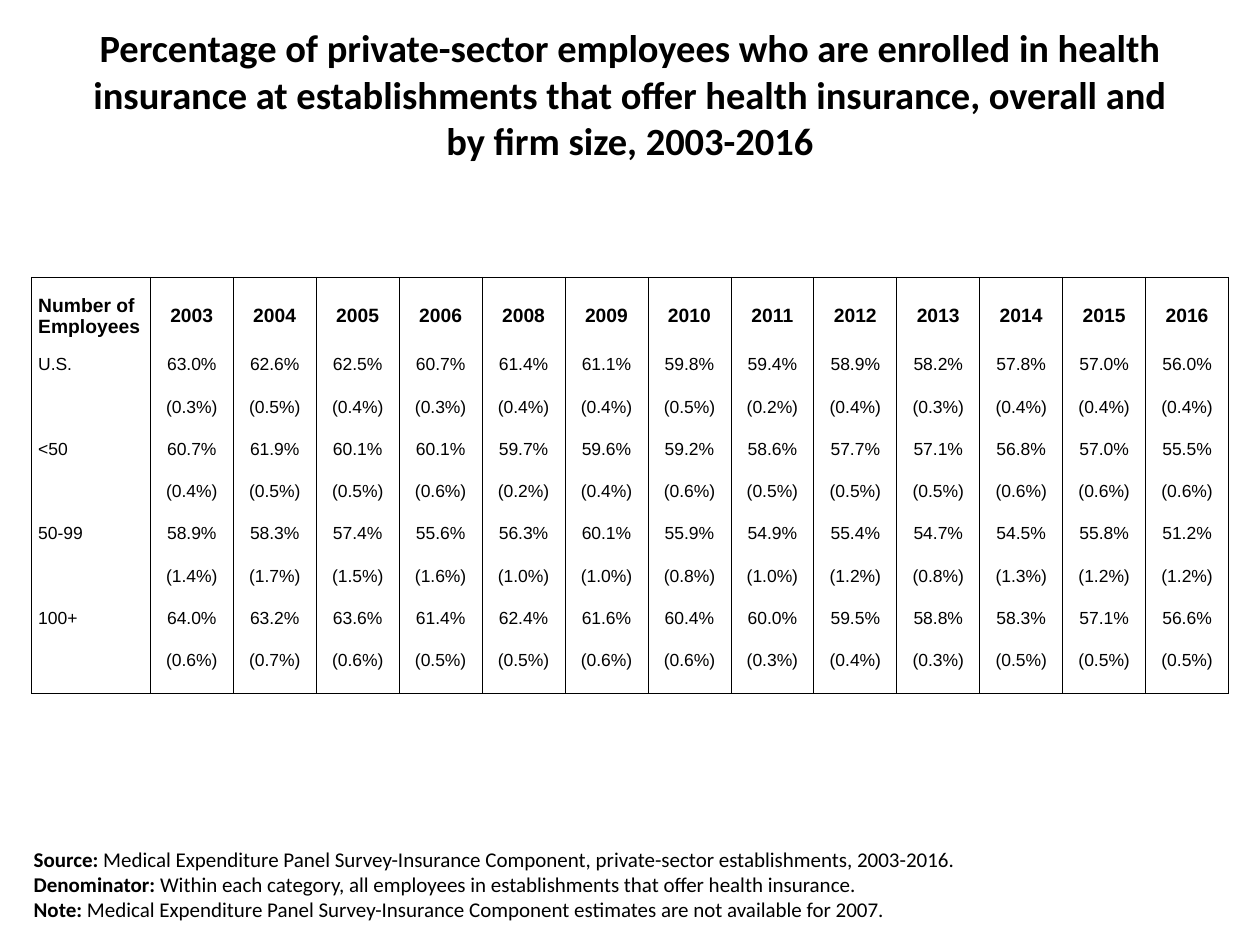
from lxml import etree
from pptx import Presentation, util as u
from pptx.dml.color import RGBColor
from pptx.enum import text
from pptx.oxml.ns import qn

# Content
TITLE = ("Percentage of private-sector employees who are enrolled in health insurance "
         "at establishments that offer health insurance, overall and by firm size, 2003-2016")
YEARS = [2003, 2004, 2005, 2006, 2008, 2009, 2010, 2011, 2012, 2013, 2014, 2015, 2016]
# Firm size, enrolment rates, standard errors (all in percent)
GROUPS = [
    ("U.S.",
     [63.0, 62.6, 62.5, 60.7, 61.4, 61.1, 59.8, 59.4, 58.9, 58.2, 57.8, 57.0, 56.0],
     [0.3, 0.5, 0.4, 0.3, 0.4, 0.4, 0.5, 0.2, 0.4, 0.3, 0.4, 0.4, 0.4]),
    ("<50",
     [60.7, 61.9, 60.1, 60.1, 59.7, 59.6, 59.2, 58.6, 57.7, 57.1, 56.8, 57.0, 55.5],
     [0.4, 0.5, 0.5, 0.6, 0.2, 0.4, 0.6, 0.5, 0.5, 0.5, 0.6, 0.6, 0.6]),
    ("50-99",
     [58.9, 58.3, 57.4, 55.6, 56.3, 60.1, 55.9, 54.9, 55.4, 54.7, 54.5, 55.8, 51.2],
     [1.4, 1.7, 1.5, 1.6, 1.0, 1.0, 0.8, 1.0, 1.2, 0.8, 1.3, 1.2, 1.2]),
    ("100+",
     [64.0, 63.2, 63.6, 61.4, 62.4, 61.6, 60.4, 60.0, 59.5, 58.8, 58.3, 57.1, 56.6],
     [0.6, 0.7, 0.6, 0.5, 0.5, 0.6, 0.6, 0.3, 0.4, 0.3, 0.5, 0.5, 0.5]),
]
NOTES = [
    ("Source: ", "Medical Expenditure Panel Survey-Insurance Component, "
                 "private-sector establishments, 2003-2016."),
    ("Denominator: ", "Within each category, all employees in establishments "
                      "that offer health insurance."),
    ("Note: ", "Medical Expenditure Panel Survey-Insurance Component estimates "
               "are not available for 2007."),
]

THEME = {"ink": "000000", "line": 0.5, "prose": "Calibri", "data": "Arial",
         "title": 22, "head": 11, "body": 10, "note": 12}
LEFT, CENTER = text.PP_ALIGN.LEFT, text.PP_ALIGN.CENTER


def write(p, content, size, font, bold=False, align=LEFT):
    p.alignment = align
    r = p.add_run()
    r.text = content
    r.font.name, r.font.size, r.font.bold = font, u.Pt(size), bold
    r.font.color.rgb = RGBColor.from_string(THEME["ink"])


def add_box(s, left, top, width, height, anchor):
    tf = s.shapes.add_textbox(u.Cm(left), u.Cm(top), u.Cm(width), u.Cm(height)).text_frame
    tf.word_wrap = True
    tf.vertical_anchor = anchor
    return tf


def set_borders(cell, sides):
    tc_pr = cell._tc.get_or_add_tcPr()
    for side in "LRTB":
        ln = etree.SubElement(tc_pr, qn(f"a:ln{side}"), w=str(u.Pt(THEME["line"])))
        if side in sides:
            fill = etree.SubElement(ln, qn("a:solidFill"))
            etree.SubElement(fill, qn("a:srgbClr"), val=THEME["ink"])
        else:
            etree.SubElement(ln, qn("a:noFill"))


prs = Presentation()
prs.slide_width, prs.slide_height = u.Cm(25.4), u.Cm(19.05)
s = prs.slides.add_slide(prs.slide_layouts[6])

# Title
tf = add_box(s, 1.27, 0.2, 22.86, 3.38, text.MSO_ANCHOR.MIDDLE)
write(tf.paragraphs[0], TITLE, THEME["title"], THEME["prose"], bold=True, align=CENTER)

# Table: each group takes a row of rates and a row of standard errors
rows = [["Number of Employees", *map(str, YEARS)]]
for name, rates, errors in GROUPS:
    rows.append([name, *(f"{v:.1f}%" for v in rates)])
    rows.append(["", *(f"({v:.1f}%)" for v in errors)])

WIDTH, HEIGHT, LABEL_W, HEAD_H = 24.13, 8.38, 2.39, 1.57
tbl = s.shapes.add_table(len(rows), len(rows[0]), u.Cm(0.64), u.Cm(5.59),
                         u.Cm(WIDTH), u.Cm(HEIGHT)).table
tbl.first_row = tbl.horz_banding = False
for j, col in enumerate(tbl.columns):
    col.width = u.Cm((WIDTH - LABEL_W) / len(YEARS) if j else LABEL_W)
for i, row in enumerate(tbl.rows):
    row.height = u.Cm((HEIGHT - HEAD_H) / (len(rows) - 1) if i else HEAD_H)

for i, row in enumerate(rows):
    head, last = i == 0, i == len(rows) - 1
    for j, value in enumerate(row):
        cell = tbl.cell(i, j)
        cell.margin_left = cell.margin_right = cell.margin_top = cell.margin_bottom = 0
        cell.vertical_anchor = text.MSO_ANCHOR.MIDDLE if head else text.MSO_ANCHOR.TOP
        set_borders(cell, "LR" + "T" * head + "B" * last)
        cell.fill.background()
        p = cell.text_frame.paragraphs[0]
        if j == 0:
            p._p.get_or_add_pPr().set("marL", str(u.Cm(0.13)))
        if value:
            write(p, value, THEME["head" if head else "body"], THEME["data"],
                  bold=head, align=CENTER if j else LEFT)

# Notes
tf = add_box(s, 0.43, 16.94, 19.25, 1.9, text.MSO_ANCHOR.TOP)
for i, (label, note) in enumerate(NOTES):
    p = tf.add_paragraph() if i else tf.paragraphs[0]
    write(p, label, THEME["note"], THEME["prose"], bold=True)
    write(p, note, THEME["note"], THEME["prose"])

prs.save("out.pptx")
